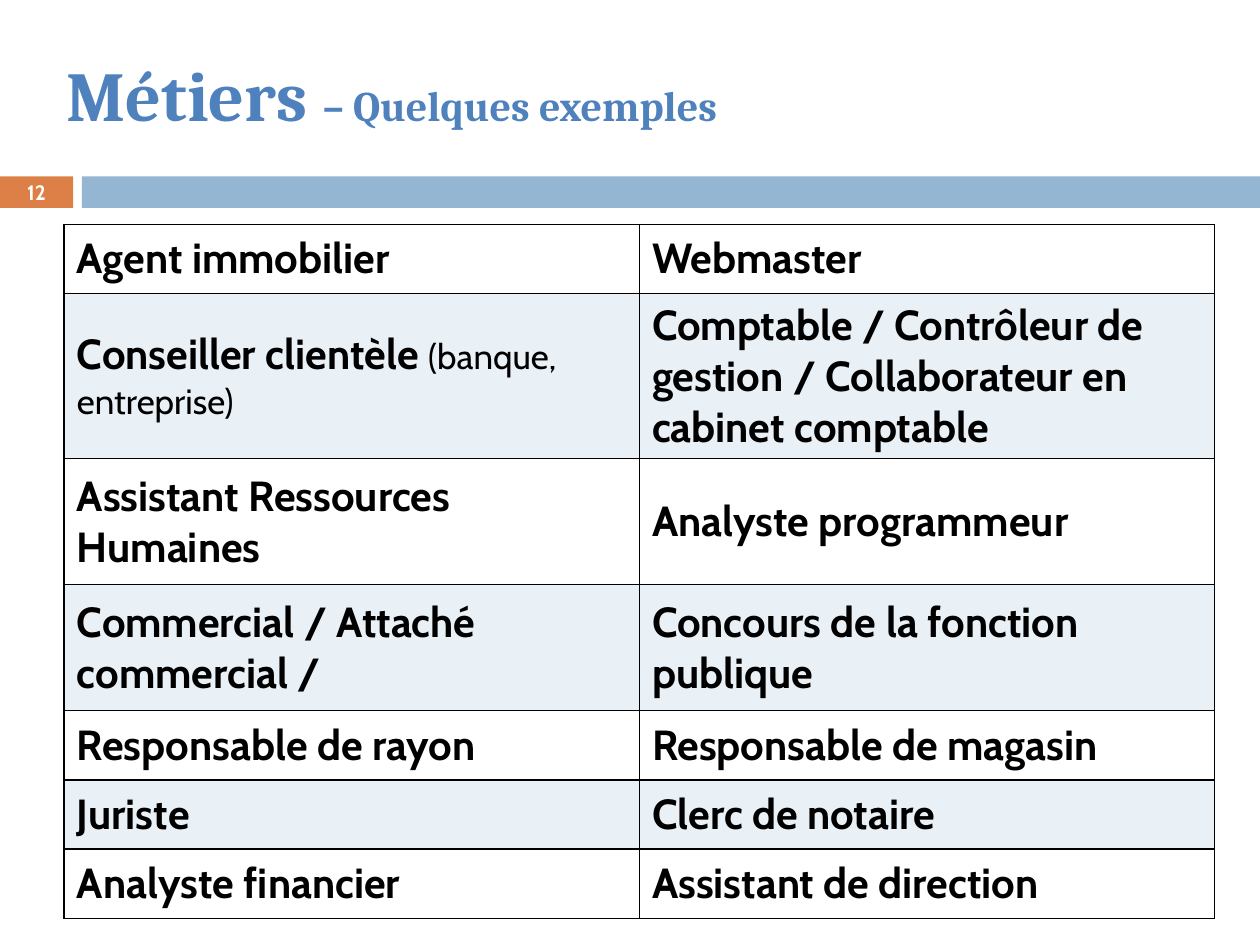
"""Build the slide listing example jobs in a two-column table."""
from lxml.etree import SubElement
from pptx import Presentation
from pptx.dml.color import RGBColor
from pptx.enum.shapes import MSO_SHAPE as Shape
from pptx.enum.text import MSO_ANCHOR as Anchor, MSO_AUTO_SIZE as Fit, PP_ALIGN as Align
from pptx.oxml.ns import qn
from pptx.util import Inches, Pt

BLACK = RGBColor(0x00, 0x00, 0x00)
WHITE = RGBColor(0xFF, 0xFF, 0xFF)
BLUE = RGBColor(0x4F, 0x81, 0xBD)
SKY = RGBColor(0x94, 0xB6, 0xD2)
RUST = RGBColor(0xDD, 0x80, 0x47)

TITLE = [("Métiers ", 40), ("– Quelques exemples", 24)]
NUMBER = "12"
BARS = [(0, 0.58, RUST), (0.65, 9.35, SKY)]
NOTE = {"Conseiller clientèle ": "(banque, entreprise)"}
JOBS = [
    (0.55, "Agent immobilier", "Webmaster"),
    (1.31, "Conseiller clientèle ",
     "Comptable / Contrôleur de gestion / Collaborateur en cabinet comptable"),
    (1, "Assistant Ressources Humaines", "Analyste programmeur"),
    (1, "Commercial / Attaché commercial /", "Concours de la fonction publique"),
    (0.55, "Responsable de rayon", "Responsable de magasin"),
    (0.55, "Juriste", "Clerc de notaire"),
    (0.55, "Analyste financier", "Assistant de direction"),
]


def box(*sizes):
    return [Inches(size) for size in sizes]


def add_run(para, text, size, color, face="Cabin", bold=True):
    run = para.add_run()
    run.text = text
    font = run.font
    font.size, font.name, font.bold = Pt(size), face, bold
    font.color.rgb = color


def add_title(slide):
    title = slide.shapes.title
    title.left, title.top, title.width, title.height = box(0.43, 0.36, 8.43, 0.77)
    frame = title.text_frame
    frame.word_wrap = True
    frame.auto_size = Fit.SHAPE_TO_FIT_TEXT
    frame.vertical_anchor = Anchor.TOP
    para = frame.paragraphs[0]
    para.alignment = Align.LEFT
    for text, size in TITLE:
        add_run(para, text, size, BLUE, "Cambria")


def add_bars(slide):
    for left, width, color in BARS:
        bar = slide.shapes.add_shape(Shape.RECTANGLE, *box(left, 1.4, width, 0.25))
        bar.shadow.inherit = False
        bar.fill.solid()
        bar.fill.fore_color.rgb = color
        bar.line.fill.background()


def add_number(slide):
    frame = slide.shapes.add_textbox(*box(0, 1.39, 0.58, 0.27)).text_frame
    frame.word_wrap = True
    frame.vertical_anchor = Anchor.MIDDLE
    frame.margin_top = frame.margin_bottom = 0
    para = frame.paragraphs[0]
    para.alignment = Align.CENTER
    add_run(para, NUMBER, 11.9, WHITE)


def style_cell(cell, shaded):
    props = cell._tc.get_or_add_tcPr()
    for side in "LRTB":
        line = SubElement(props, qn(f"a:ln{side}"), w=str(Pt(1)))
        fill = SubElement(line, qn("a:solidFill"))
        SubElement(fill, qn("a:srgbClr"), val=str(BLACK))
    if shaded:
        cell.fill.solid()
        cell.fill.fore_color.rgb = SKY
        color = props.find(f"{qn('a:solidFill')}/{qn('a:srgbClr')}")
        SubElement(color, qn("a:alpha"), val="20000")
    else:
        cell.fill.background()


def add_jobs(slide):
    area = box(0.51, 1.78, 9.13, 5.51)
    table = slide.shapes.add_table(len(JOBS), 2, *area).table
    table.first_row = table.horz_banding = False
    for row, (height, *names) in enumerate(JOBS):
        table.rows[row].height = Inches(height)
        for col, name in enumerate(names):
            cell = table.cell(row, col)
            cell.vertical_anchor = Anchor.MIDDLE
            style_cell(cell, row % 2 == 1)
            para = cell.text_frame.paragraphs[0]
            add_run(para, name, 24, BLACK)
            if name in NOTE:
                add_run(para, NOTE[name], 20, BLACK, bold=False)


def main():
    deck = Presentation()
    deck.slide_width, deck.slide_height = box(10, 7.5)
    slide = deck.slides.add_slide(deck.slide_layouts[5])
    add_bars(slide)
    add_jobs(slide)
    add_title(slide)
    add_number(slide)
    deck.save("out.pptx")


if __name__ == "__main__":
    main()
